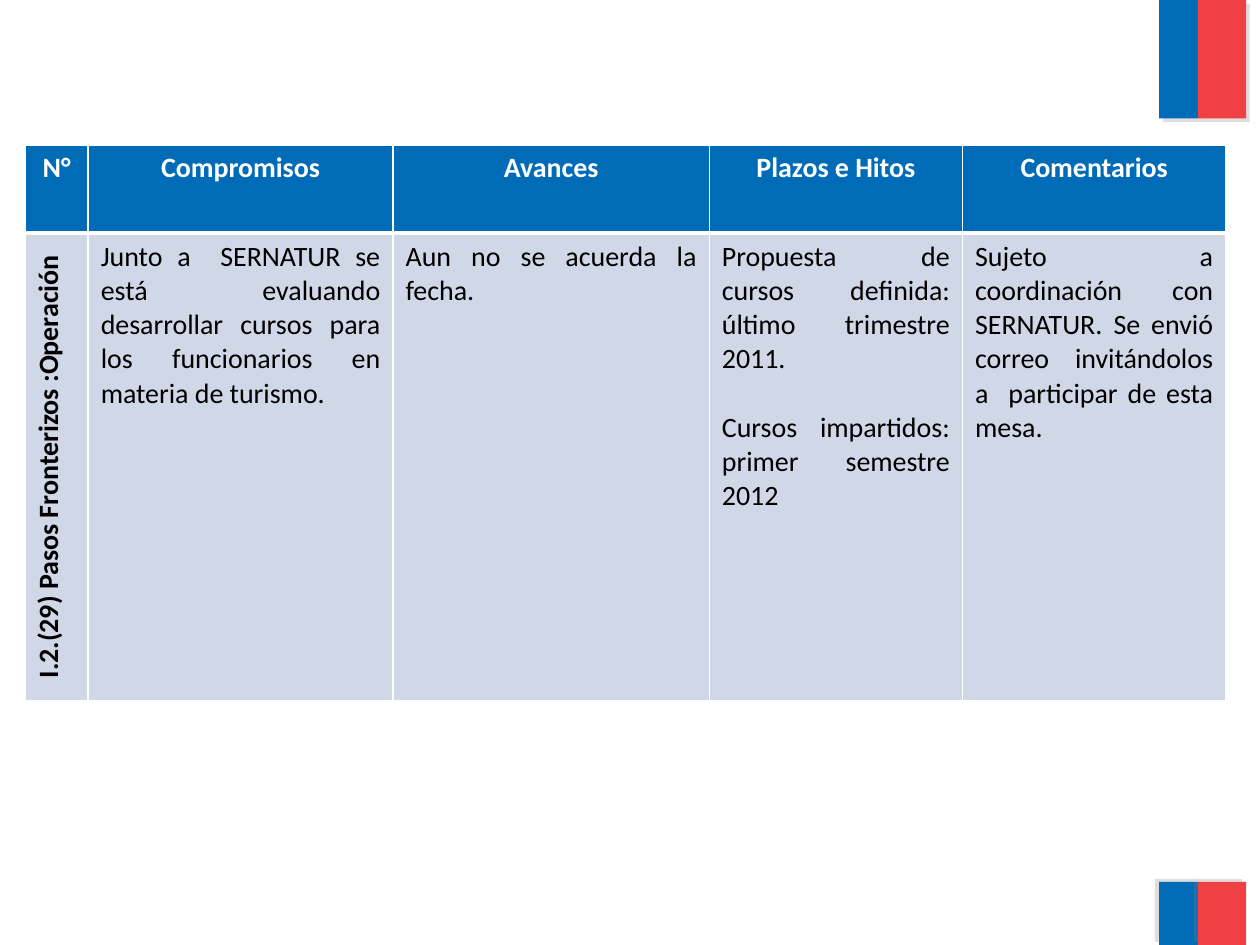
from pptx import Presentation
from pptx.util import Inches, Pt
from pptx.dml.color import RGBColor
from pptx.enum.shapes import MSO_SHAPE
from pptx.enum.text import PP_ALIGN
from pptx.oxml import parse_xml
from pptx.oxml.ns import nsdecls

BLUE, RED, PALE, WHITE, BLACK = "006CB7", "EF4144", "D0D8E8", "FFFFFF", "000000"


def tint(code):
    return RGBColor.from_string(code)


def write(frame, text, color=BLACK, bold=False, align=PP_ALIGN.JUSTIFY, size=16, gap=19.5):
    for i, line in enumerate(text.split("\n")):
        para = frame.add_paragraph() if i else frame.paragraphs[0]
        para.alignment = align
        if i:
            para.space_before = Pt(gap)
        run = para.add_run()
        run.text = line
        font = run.font
        font.name, font.size, font.bold = "Calibri", Pt(size), bold
        font.color.rgb = tint(color)


deck = Presentation()
deck.slide_width, deck.slide_height = Inches(10), Inches(7.5)
slide = deck.slides.add_slide(deck.slide_layouts[6])

# Flag bands at the top and bottom right: top, height, shadow angle
for top, high, angle in [(0, 0.94, 45), (7, 0.5, 215)]:
    for left, wide, color in [(9.2, 0.31, BLUE), (9.51, 0.38, RED)]:
        band = slide.shapes.add_shape(MSO_SHAPE.RECTANGLE, Inches(left), Inches(top),
                                      Inches(wide), Inches(high))
        band.fill.solid()
        band.fill.fore_color.rgb = tint(color)
        band.line.fill.background()
        band._element.spPr.append(parse_xml(
            f'<a:effectLst {nsdecls("a")}><a:outerShdw blurRad="0" dist="{Pt(3)}" '
            f'dir="{angle * 60000}" algn="ctr" rotWithShape="0"><a:srgbClr val="808080">'
            '<a:alpha val="25000"/></a:srgbClr></a:outerShdw></a:effectLst>'))

# Table grid
cols, rows = [0.5, 2.42, 2.51, 2.01, 2.09], [0.7, 3.71]
heads = ["N°", "Compromisos", "Avances", "Plazos e Hitos", "Comentarios"]
body = [
    "I.2.(29) Pasos Fronterizos :Operación",
    "Junto a  SERNATUR se está evaluando desarrollar cursos para los funcionarios "
    "en materia de turismo.",
    "Aun no se acuerda la fecha.",
    "Propuesta de cursos definida: último trimestre 2011.\n"
    "Cursos impartidos: primer semestre 2012",
    "Sujeto a coordinación con SERNATUR. Se envió correo invitándolos "
    "a  participar de esta mesa.",
]
table = slide.shapes.add_table(len(rows), len(cols), Inches(0.2), Inches(1.15),
                               Inches(sum(cols)), Inches(sum(rows))).table
for col, wide in zip(table.columns, cols):
    col.width = Inches(wide)
for row, high in zip(table.rows, rows):
    row.height = Inches(high)

# Cells: white borders, fill and text
for r, texts in enumerate([heads, body]):
    for c, text in enumerate(texts):
        cell = table.cell(r, c)
        props = cell._tc.get_or_add_tcPr()
        thick = "T" if r else "B"
        for side in "LRTB":
            width = Pt(3 if side == thick else 1)
            props.append(parse_xml(
                f'<a:ln{side} {nsdecls("a")} w="{width}"><a:solidFill>'
                f'<a:srgbClr val="{WHITE}"/></a:solidFill></a:ln{side}>'))
        cell.fill.solid()
        cell.fill.fore_color.rgb = tint(PALE if r else BLUE)
        title = r == 0 or c == 0
        write(cell.text_frame, text, color=BLACK if r else WHITE, bold=title,
              align=PP_ALIGN.CENTER if title else PP_ALIGN.JUSTIFY)
        if r and c == 0:
            props.set("vert", "vert270")

deck.save("out.pptx")
